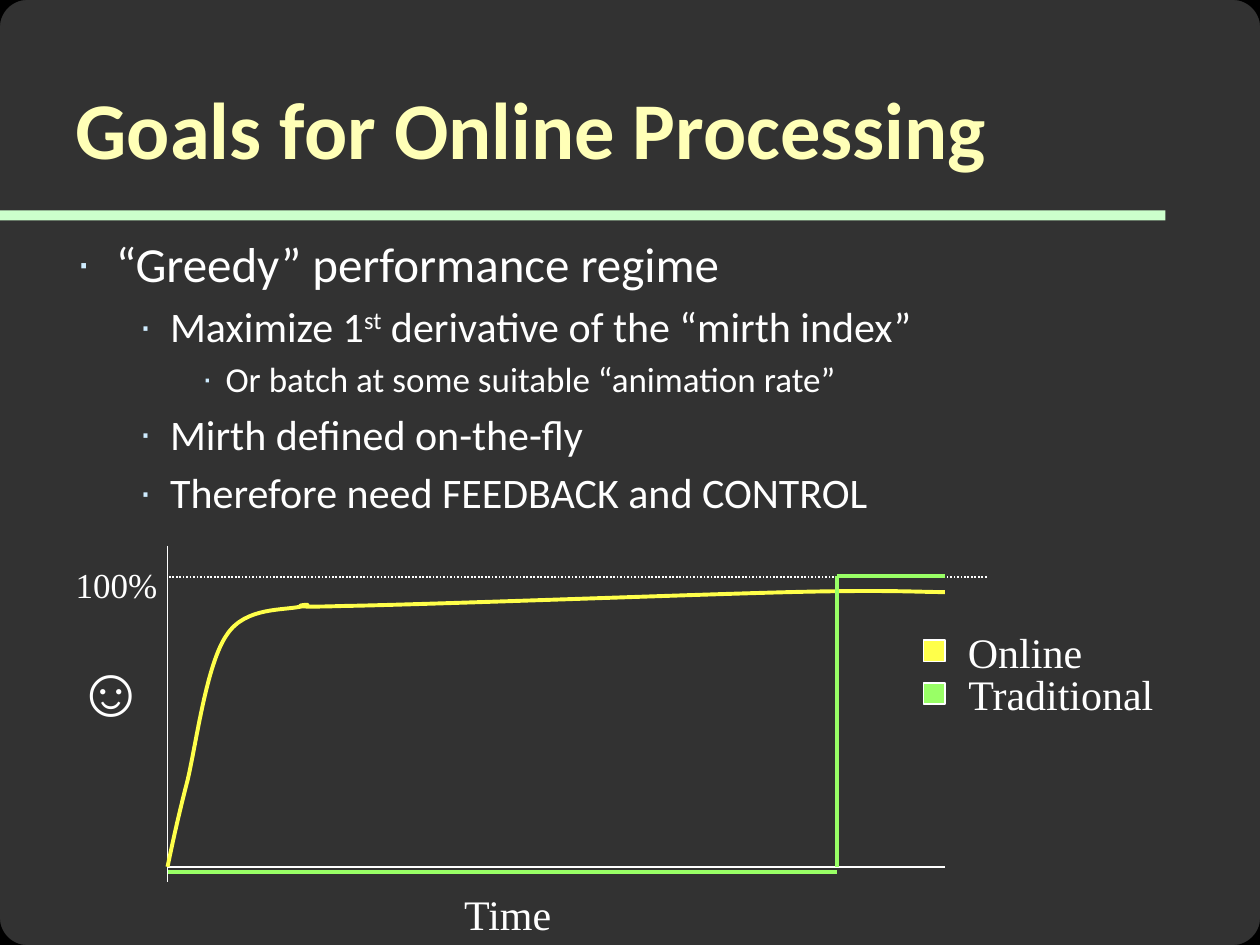
from typing import NamedTuple

from lxml.etree import SubElement
from pptx import Presentation
from pptx.dml.color import RGBColor
from pptx.enum.dml import MSO_LINE
from pptx.enum.shapes import MSO_CONNECTOR, MSO_SHAPE
from pptx.enum.text import MSO_ANCHOR, PP_ALIGN
from pptx.oxml.ns import qn
from pptx.util import Inches, Pt

WHITE, YELLOW, GREEN = "FFFFFF", "FFFF4A", "99FF66"
Point = tuple[float, float]


class Level(NamedTuple):
    size: int
    margin: float
    hanging: float


class Bullet(NamedTuple):
    level: int
    text: str
    superscript: str = ""
    rest: str = ""


class Rule(NamedTuple):
    start: Point
    end: Point
    color: str = WHITE
    width: float = 1
    dash: MSO_LINE | None = None


class Label(NamedTuple):
    text: str
    left: float
    top: float
    width: float
    height: float
    size: int = 24


class Series(NamedTuple):
    name: str
    color: str
    top: float
    label_width: float


LEVELS = [Level(28, 0.32, 0.32), Level(24, 0.75, 0.25), Level(20, 1.19, 0.19)]
BULLETS = [
    Bullet(0, "“Greedy” performance regime"),
    Bullet(1, "Maximize 1", "st", " derivative of the “mirth index”"),
    Bullet(2, "Or batch at some suitable “animation rate”"),
    Bullet(1, "Mirth defined on-the-fly"),
    Bullet(1, "Therefore need FEEDBACK and CONTROL"),
]
ORIGIN_X, AXIS_Y, JUMP_X, PLOT_RIGHT = 1.33, 6.88, 6.64, 7.5
AXES = [
    Rule((ORIGIN_X, 4.33), (ORIGIN_X, 7)),
    Rule((7.83, 4.58), (ORIGIN_X, 4.58), dash=MSO_LINE.ROUND_DOT),
    Rule((PLOT_RIGHT, AXIS_Y), (ORIGIN_X, AXIS_Y)),
]
TRADITIONAL = [
    Rule((ORIGIN_X, 6.92), (JUMP_X, 6.92), GREEN, 2.25),
    Rule((JUMP_X, 4.57), (PLOT_RIGHT, 4.57), GREEN, 2.25),
    Rule((JUMP_X, 4.57), (JUMP_X, AXIS_Y), GREEN, 2.25),
]
# Start point, then two control points and an end point per segment
ONLINE = [
    (ORIGIN_X, AXIS_Y),
    (1.37, 6.69), (1.41, 6.5), (1.49, 6.19),
    (1.56, 5.89), (1.64, 5.27), (1.8, 5.04),
    (1.95, 4.81), (2.26, 4.85), (2.41, 4.81),
    (2.57, 4.78), (2.08, 4.83), (2.72, 4.81),
    (3.36, 4.8), (5.47, 4.72), (6.27, 4.7),
    (7.06, 4.68), (7.29, 4.7), (PLOT_RIGHT, 4.7),
]
LABELS = [
    Label("Time", 3.58, 7, 0.9, 0.5),
    Label("☺", 0.5, 5.08, 0.67, 0.77, 40),
    Label("100%", 0.5, 4.42, 0.85, 0.43, 20),
]
LEGEND = [Series("Online", YELLOW, 5.08, 1.11), Series("Traditional", GREEN, 5.42, 1.68)]


def rgb(value: str) -> RGBColor:
    return RGBColor.from_string(value)


def style_font(font, color: str = WHITE, **values) -> None:
    for name, value in values.items():
        setattr(font, name, value)
    font.color.rgb = rgb(color)


def place(box, left: float, top: float, width: float, height: float) -> None:
    bounds = {"left": left, "top": top, "width": width, "height": height}
    for name, value in bounds.items():
        setattr(box, name, Inches(value))


def style_line(line, color: str, width: float) -> None:
    line.color.rgb = rgb(color)
    line.width = Pt(width)


def draw_rule(page, rule: Rule) -> None:
    ends = [Inches(value) for value in (*rule.start, *rule.end)]
    connector = page.shapes.add_connector(MSO_CONNECTOR.STRAIGHT, *ends)
    style_line(connector.line, rule.color, rule.width)
    if rule.dash is not None:
        connector.line.dash_style = rule.dash
    SubElement(connector._element.spPr, qn("a:effectLst"))


def draw_curve(page, points: list[Point], color: str, width: float) -> None:
    """Draw joined cubic curves as one open outline."""
    start, *others = [(Inches(x), Inches(y)) for x, y in points]
    builder = page.shapes.build_freeform(*start)
    builder.add_line_segments(others, close=False)
    curve = builder.convert_to_shape()
    # Each three straight steps become one cubic segment
    steps = list(curve._element.iter(qn("a:lnTo")))
    outline = steps[0].getparent()
    for first in range(0, len(steps), 3):
        cubic = SubElement(outline, qn("a:cubicBezTo"))
        for step in steps[first:first + 3]:
            cubic.append(step[0])
            outline.remove(step)
    curve.fill.background()
    curve.shadow.inherit = False
    style_line(curve.line, color, width)


def draw_rectangle(page, bounds: tuple[float, ...], color: str, outlined: bool = True) -> None:
    box = page.shapes.add_shape(MSO_SHAPE.RECTANGLE, *map(Inches, bounds))
    box.shadow.inherit = False
    box.fill.solid()
    box.fill.fore_color.rgb = rgb(color)
    if outlined:
        style_line(box.line, WHITE, 1)
    else:
        box.line.fill.background()


def draw_label(page, label: Label) -> None:
    box = page.shapes.add_textbox(*map(Inches, label[1:5]))
    box.text_frame.word_wrap = False
    para = box.text_frame.paragraphs[0]
    para.alignment = PP_ALIGN.CENTER
    span = para.add_run()
    span.text = label.text
    style_font(span.font, name="Times New Roman", size=Pt(label.size))


def write_bullet(para, bullet: Bullet) -> None:
    level = LEVELS[bullet.level]
    para.level = bullet.level
    properties = para._p.get_or_add_pPr()
    properties.set("marL", str(Inches(level.margin)))
    properties.set("indent", str(-Inches(level.hanging)))
    bullet_color = SubElement(properties, qn("a:buClr"))
    SubElement(bullet_color, qn("a:srgbClr")).set("val", "CFECFF")
    SubElement(properties, qn("a:buChar")).set("char", "·")
    for text in filter(None, bullet[1:]):
        span = para.add_run()
        span.text = text
        style_font(span.font, name="Calibri", size=Pt(level.size))
        if text == bullet.superscript:
            span.font._element.set("baseline", "30000")


def draw_corners(page) -> None:
    radius, inset, handle = 0.28, 0.21, 0.15
    offsets = [(0, radius), (handle, radius), (radius, handle), (radius, 0)]
    for center_x, side_x in ((inset, -1), (10 - inset, 1)):
        for center_y, side_y in ((inset, -1), (7.5 - inset, 1)):
            arc = [(center_x + side_x * x, center_y + side_y * y) for x, y in offsets]
            draw_curve(page, arc, "000000", 10)


def main() -> None:
    deck = Presentation()
    deck.slide_width, deck.slide_height = Inches(10), Inches(7.5)
    page = deck.slides.add_slide(deck.slide_layouts[1])
    page.background.fill.solid()
    page.background.fill.fore_color.rgb = rgb("323232")

    # Frame and title
    draw_corners(page)
    draw_rectangle(page, (0, 1.67, 9.25, 0.08), "CCFFCC", outlined=False)
    title, body = page.placeholders
    place(title, 0.5, 0.58, 9.17, 1.12)
    title.text_frame.text = "Goals for Online Processing"
    title.text_frame.vertical_anchor = MSO_ANCHOR.TOP
    heading = title.text_frame.paragraphs[0]
    heading.alignment = PP_ALIGN.LEFT
    style_font(heading.runs[0].font, "FFFFB7", name="Calibri", size=Pt(46), bold=True)

    # Bullet list
    place(body, 0.5, 1.8, 9.17, 5.2)
    frame = body.text_frame
    for index, bullet in enumerate(BULLETS):
        write_bullet(frame.add_paragraph() if index else frame.paragraphs[0], bullet)

    # Sketch of progress over time
    for rule in AXES:
        draw_rule(page, rule)
    draw_curve(page, ONLINE, YELLOW, 2.25)
    for rule in TRADITIONAL:
        draw_rule(page, rule)
    for label in LABELS:
        draw_label(page, label)

    # Legend
    for series in LEGEND:
        draw_rectangle(page, (7.33, series.top, 0.17, 0.17), series.color)
        draw_label(page, Label(series.name, 7.58, series.top - 0.16, series.label_width, 0.5))

    deck.save("out.pptx")


if __name__ == "__main__":
    main()
